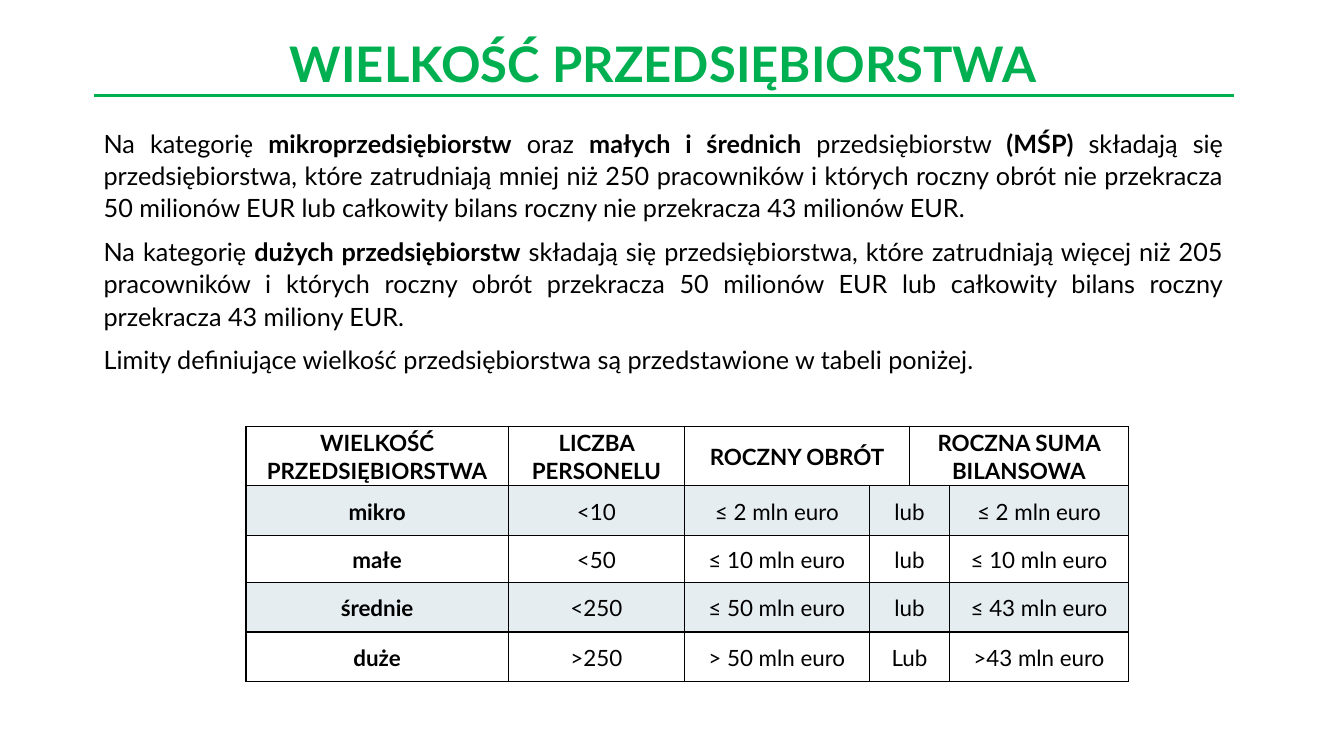
from dataclasses import dataclass

from lxml.etree import SubElement
from pptx import Presentation
from pptx.dml.color import RGBColor
from pptx.enum.shapes import MSO_CONNECTOR
from pptx.enum.text import MSO_ANCHOR, MSO_AUTO_SIZE, PP_ALIGN
from pptx.oxml import parse_xml
from pptx.oxml.ns import nsdecls, qn
from pptx.slide import Slide
from pptx.table import _Cell
from pptx.text.text import TextFrame, _Paragraph
from pptx.util import Inches, Pt

COLORS = {"green": "00B050", "black": "000000", "band": "7FA8BA"}
FONT = "Lato"
BAND_ALPHA = 20000
BORDER_WIDTH = Pt(1)


@dataclass(frozen=True)
class TextStyle:
    size: float
    color: str
    align: PP_ALIGN
    line_spacing: float
    space_after: float


@dataclass(frozen=True)
class SizeClass:
    name: str
    staff: str
    turnover: str
    conjunction: str
    balance: str


TITLE = TextStyle(35, "green", PP_ALIGN.CENTER, 0.9, 0)
BODY = TextStyle(18, "black", PP_ALIGN.JUSTIFY, 1.07, 8)
CELL = TextStyle(16, "black", PP_ALIGN.CENTER, 1.07, 8)

# Double asterisks enclose bold words
DEFINITIONS = [
    "Na kategorię **mikroprzedsiębiorstw** oraz **małych i średnich** przedsiębiorstw "
    "**(MŚP)** składają się przedsiębiorstwa, które zatrudniają mniej niż 250 pracowników "
    "i których roczny obrót nie przekracza 50 milionów EUR lub całkowity bilans roczny "
    "nie przekracza 43 milionów EUR.",
    "Na kategorię **dużych przedsiębiorstw** składają się przedsiębiorstwa, które "
    "zatrudniają więcej niż 205 pracowników i których roczny obrót przekracza 50 milionów "
    "EUR lub całkowity bilans roczny przekracza 43 miliony EUR.",
    "Limity definiujące wielkość przedsiębiorstwa są przedstawione w tabeli poniżej.",
]
HEADINGS = {
    0: "WIELKOŚĆ PRZEDSIĘBIORSTWA",
    1: "LICZBA PERSONELU",
    2: "ROCZNY OBRÓT",
    4: "ROCZNA SUMA BILANSOWA",
}
SIZE_CLASSES = [
    SizeClass("mikro", "<10", "≤ 2 mln euro", "lub", "≤ 2 mln euro"),
    SizeClass("małe", "<50", "≤ 10 mln euro", "lub", "≤ 10 mln euro"),
    SizeClass("średnie", "<250", "≤ 50 mln euro", "lub", "≤ 43 mln euro"),
    SizeClass("duże", ">250", "> 50 mln euro", "Lub", ">43 mln euro"),
]
COLUMN_WIDTHS = [2.6, 1.75, 1.83, 0.4, 0.4, 1.77]
ROW_HEIGHTS = [0.59, 0.49, 0.47, 0.49, 0.49]


def write_paragraph(paragraph: _Paragraph, text: str, style: TextStyle) -> None:
    layout = {
        "alignment": style.align,
        "line_spacing": style.line_spacing,
        "space_before": Pt(0),
        "space_after": Pt(style.space_after),
    }
    for attribute, value in layout.items():
        setattr(paragraph, attribute, value)
    for index, part in enumerate(text.split("**")):
        if part:
            run = paragraph.add_run()
            run.text = part
            font_format = {"name": FONT, "size": Pt(style.size), "bold": index % 2 == 1}
            for attribute, value in font_format.items():
                setattr(run.font, attribute, value)
            run.font.color.rgb = RGBColor.from_string(COLORS[style.color])


def write_text(frame: TextFrame, texts: list[str], style: TextStyle) -> None:
    frame.word_wrap = True
    for index, text in enumerate(texts):
        paragraph = frame.add_paragraph() if index else frame.paragraphs[0]
        write_paragraph(paragraph, text, style)


def add_heading(slide: Slide) -> None:
    title = slide.shapes.title
    place = {"left": 1.08, "top": 0.15, "width": 11, "height": 0.82}
    for attribute, value in place.items():
        setattr(title, attribute, Inches(value))
    title.text_frame.auto_size = MSO_AUTO_SIZE.NONE
    title.text_frame.vertical_anchor = MSO_ANCHOR.BOTTOM
    write_text(title.text_frame, ["**WIELKOŚĆ PRZEDSIĘBIORSTWA**"], TITLE)

    underline = slide.shapes.add_connector(
        MSO_CONNECTOR.STRAIGHT, Inches(0.93), Inches(0.95), Inches(12.24), Inches(0.95)
    )
    underline.line.color.rgb = RGBColor.from_string(COLORS["green"])
    underline.line.width = Pt(2.25)
    SubElement(underline.element.spPr, qn("a:effectLst"))


def add_definitions(slide: Slide) -> None:
    box = slide.shapes.add_textbox(Inches(0.93), Inches(1.2), Inches(11.3), Inches(2.58))
    write_text(box.text_frame, DEFINITIONS, BODY)
    box.text_frame.auto_size = MSO_AUTO_SIZE.SHAPE_TO_FIT_TEXT


def format_cell(cell: _Cell, banded: bool) -> None:
    margins = {"margin_left": 0.07, "margin_right": 0.07, "margin_top": 0, "margin_bottom": 0}
    for attribute, value in margins.items():
        setattr(cell, attribute, Inches(value))
    cell.vertical_anchor = MSO_ANCHOR.MIDDLE
    if banded:
        cell.fill.solid()
        cell.fill.fore_color.rgb = RGBColor.from_string(COLORS["band"])
    else:
        cell.fill.background()
    properties = cell._tc.get_or_add_tcPr()
    for color in properties.iter(qn("a:srgbClr")):
        SubElement(color, qn("a:alpha"), val=str(BAND_ALPHA))
    # Borders come before the fill
    for index, side in enumerate(["lnL", "lnR", "lnT", "lnB"]):
        border = parse_xml(
            f'<a:{side} {nsdecls("a")} w="{BORDER_WIDTH}"><a:solidFill>'
            f'<a:srgbClr val="{COLORS["black"]}"/></a:solidFill></a:{side}>'
        )
        properties.insert(index, border)


def add_limits_table(slide: Slide) -> None:
    table = slide.shapes.add_table(
        len(ROW_HEIGHTS), len(COLUMN_WIDTHS), Inches(2.44), Inches(4.23),
        Inches(sum(COLUMN_WIDTHS)), Inches(sum(ROW_HEIGHTS)),
    ).table
    table.first_row = table.horz_banding = False
    for column, width in zip(table.columns, COLUMN_WIDTHS):
        column.width = Inches(width)
    for row, height in zip(table.rows, ROW_HEIGHTS):
        row.height = Inches(height)

    # The headings split the narrow columns, the rows below join them
    for column in (2, 4):
        table.cell(0, column).merge(table.cell(0, column + 1))
    rows = [{column: f"**{text}**" for column, text in HEADINGS.items()}]
    for row, entry in enumerate(SIZE_CLASSES, start=1):
        table.cell(row, 3).merge(table.cell(row, 4))
        rows.append({0: f"**{entry.name}**", 1: entry.staff, 2: entry.turnover,
                     3: entry.conjunction, 5: entry.balance})

    for row, texts in enumerate(rows):
        for column in range(len(COLUMN_WIDTHS)):
            cell = table.cell(row, column)
            format_cell(cell, banded=row % 2 == 1)
            if column in texts:
                write_paragraph(cell.text_frame.paragraphs[0], texts[column], CELL)


def main() -> None:
    presentation = Presentation()
    presentation.slide_width = Inches(13.33)
    presentation.slide_height = Inches(7.5)
    slide = presentation.slides.add_slide(presentation.slide_layouts[5])
    add_heading(slide)
    add_definitions(slide)
    add_limits_table(slide)
    presentation.save("out.pptx")


if __name__ == "__main__":
    main()
